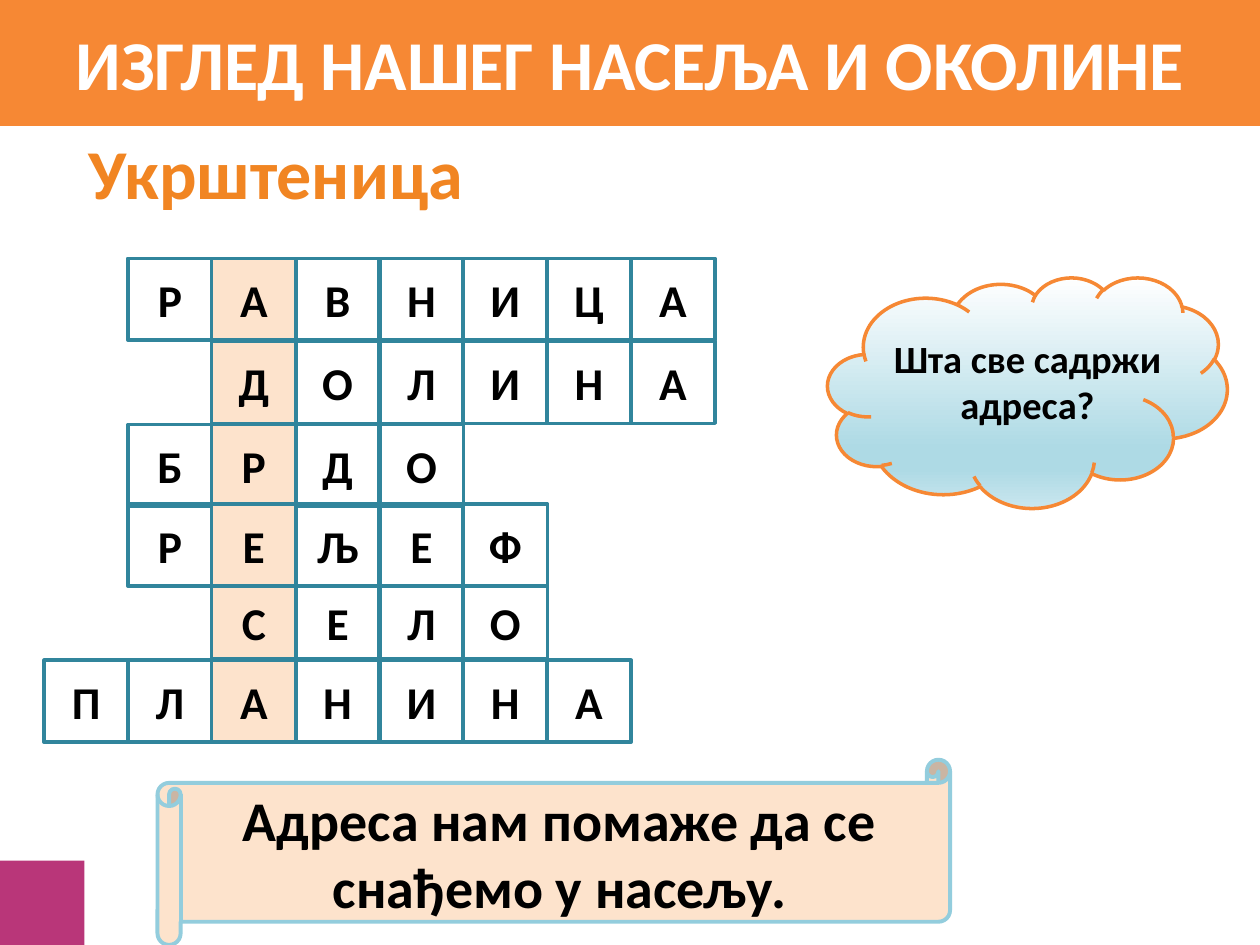
from dataclasses import dataclass

import lxml.etree
import pptx
import pptx.dml.color
import pptx.enum.shapes
import pptx.enum.text
import pptx.oxml.ns
import pptx.util

Inches = pptx.util.Inches
Shape = pptx.enum.shapes.MSO_SHAPE


@dataclass(frozen=True)
class Theme:
    font: str = "Calibri"
    orange: str = "F68834"
    heading: str = "F18522"
    magenta: str = "B93679"
    peach: str = "FDE3CC"
    teal: str = "31859C"
    sky: str = "93CDDD"
    white: str = "FFFFFF"
    black: str = "000000"
    cloud_stops: tuple = ((0, "FFFFFF"), (74, "AEDAE5"), (83, "AEDAE5"), (100, "C9E6EE"))
    title_size: int = 40
    scroll_size: int = 32
    letter_size: int = 26
    question_size: int = 22


@dataclass(frozen=True)
class Box:
    left: float
    top: float
    width: float
    height: float

    def lengths(self) -> tuple:
        return tuple(Inches(v) for v in (self.left, self.top, self.width, self.height))


@dataclass(frozen=True)
class Word:
    letters: str
    column: int
    top: float
    height: float = 0.65


THEME = Theme()
GRID_LEFT, PITCH, CELL_WIDTH, ANSWER_COLUMN = 0.35, 0.665, 0.67, 2
WORDS = (
    Word("РАВНИЦА", 1, 2.05),
    Word("ДОЛИНА", 2, 2.71),
    Word("БРДО", 1, 3.37),
    Word("РЕЉЕФ", 1, 4),
    Word("СЕЛО", 2, 4.65, 0.58),
    Word("ПЛАНИНА", 0, 5.24),
)


def rgb(color: str) -> pptx.dml.color.RGBColor:
    return pptx.dml.color.RGBColor.from_string(color)


def write(sp, text: str, size: int, color: str, middle: bool = True) -> None:
    """Put one centred bold paragraph in a shape."""
    tf = sp.text_frame
    tf.text = text
    tf.word_wrap = True
    tf.auto_size = pptx.enum.text.MSO_AUTO_SIZE.NONE
    anchor = pptx.enum.text.MSO_ANCHOR
    tf.vertical_anchor = anchor.MIDDLE if middle else anchor.TOP
    p = tf.paragraphs[0]
    p.alignment = pptx.enum.text.PP_ALIGN.CENTER
    font = p.runs[0].font
    font.name, font.size, font.bold = THEME.font, pptx.util.Pt(size), True
    font.color.rgb = rgb(color)


def add_shape(slide, kind, box: Box, fill: str | None = None,
              line: str | None = None, line_width: float = 2):
    sp = slide.shapes.add_shape(kind, *box.lengths())
    sp.shadow.inherit = False
    if fill:
        sp.fill.solid()
        sp.fill.fore_color.rgb = rgb(fill)
    else:
        sp.fill.background()
    if line:
        sp.line.color.rgb = rgb(line)
        sp.line.width = pptx.util.Pt(line_width)
    else:
        sp.line.fill.background()
    return sp


def add_text(slide, box: Box, text: str, size: int, color: str) -> None:
    write(slide.shapes.add_textbox(*box.lengths()), text, size, color, middle=False)


def set_gradient(sp, stops: tuple) -> None:
    """Fill a shape from top to bottom with any number of stops."""
    sp.fill.gradient()
    sp.fill.gradient_angle = 270
    qn = pptx.oxml.ns.qn
    stop_list = sp._element.spPr.find(f".//{qn('a:gsLst')}")
    for stop in list(stop_list):
        stop_list.remove(stop)
    for percent, color in stops:
        stop = lxml.etree.SubElement(stop_list, qn("a:gs"), pos=str(percent * 1000))
        lxml.etree.SubElement(stop, qn("a:srgbClr"), val=color)


def add_word(slide, word: Word) -> None:
    for column, letter in enumerate(word.letters, start=word.column):
        box = Box(GRID_LEFT + column * PITCH, word.top, CELL_WIDTH, word.height)
        fill = THEME.peach if column == ANSWER_COLUMN else None
        sp = add_shape(slide, Shape.RECTANGLE, box, fill, THEME.teal)
        write(sp, letter, THEME.letter_size, THEME.black)


def main() -> None:
    prs = pptx.Presentation()
    prs.slide_width, prs.slide_height = Inches(10), Inches(7.5)
    slide = prs.slides.add_slide(prs.slide_layouts[5])

    # Title banner, corner square and heading
    title = slide.shapes.title
    title.left, title.top, title.width, title.height = Box(0, 0, 10, 1).lengths()
    title.fill.solid()
    title.fill.fore_color.rgb = rgb(THEME.orange)
    write(title, "ИЗГЛЕД НАШЕГ НАСЕЉА И ОКОЛИНЕ", THEME.title_size, THEME.white)
    add_shape(slide, Shape.RECTANGLE, Box(0, 6.83, 0.67, 0.67), THEME.magenta)
    add_text(slide, Box(-0.02, 0.98, 4.42, 0.77), "Укрштеница",
             THEME.title_size, THEME.heading)

    # Question cloud
    cloud = add_shape(slide, Shape.CLOUD, Box(6.57, 2.2, 3.17, 1.83), line=THEME.orange)
    set_gradient(cloud, THEME.cloud_stops)
    add_text(slide, Box(6.86, 2.61, 2.59, 0.84), "Шта све садржи адреса?",
             THEME.question_size, THEME.black)

    # Answer scroll
    scroll = add_shape(slide, Shape.HORIZONTAL_SCROLL, Box(1.25, 6.03, 6.29, 1.47),
                       THEME.peach, THEME.sky, 2.25)
    write(scroll, "Адреса нам помаже да се снађемо у насељу.",
          THEME.scroll_size, THEME.black)

    # Crossword
    for word in WORDS:
        add_word(slide, word)

    prs.save("out.pptx")


if __name__ == "__main__":
    main()
